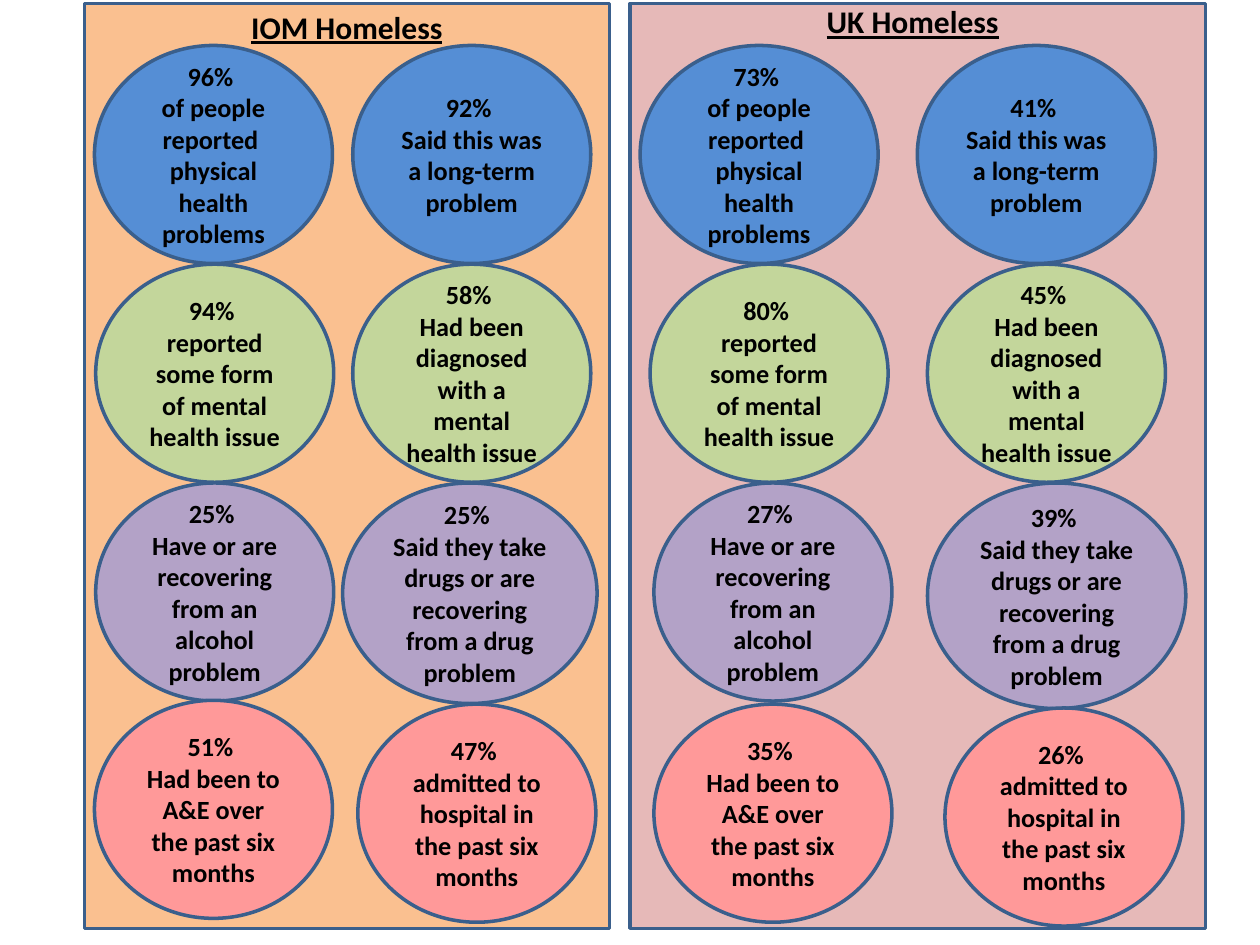
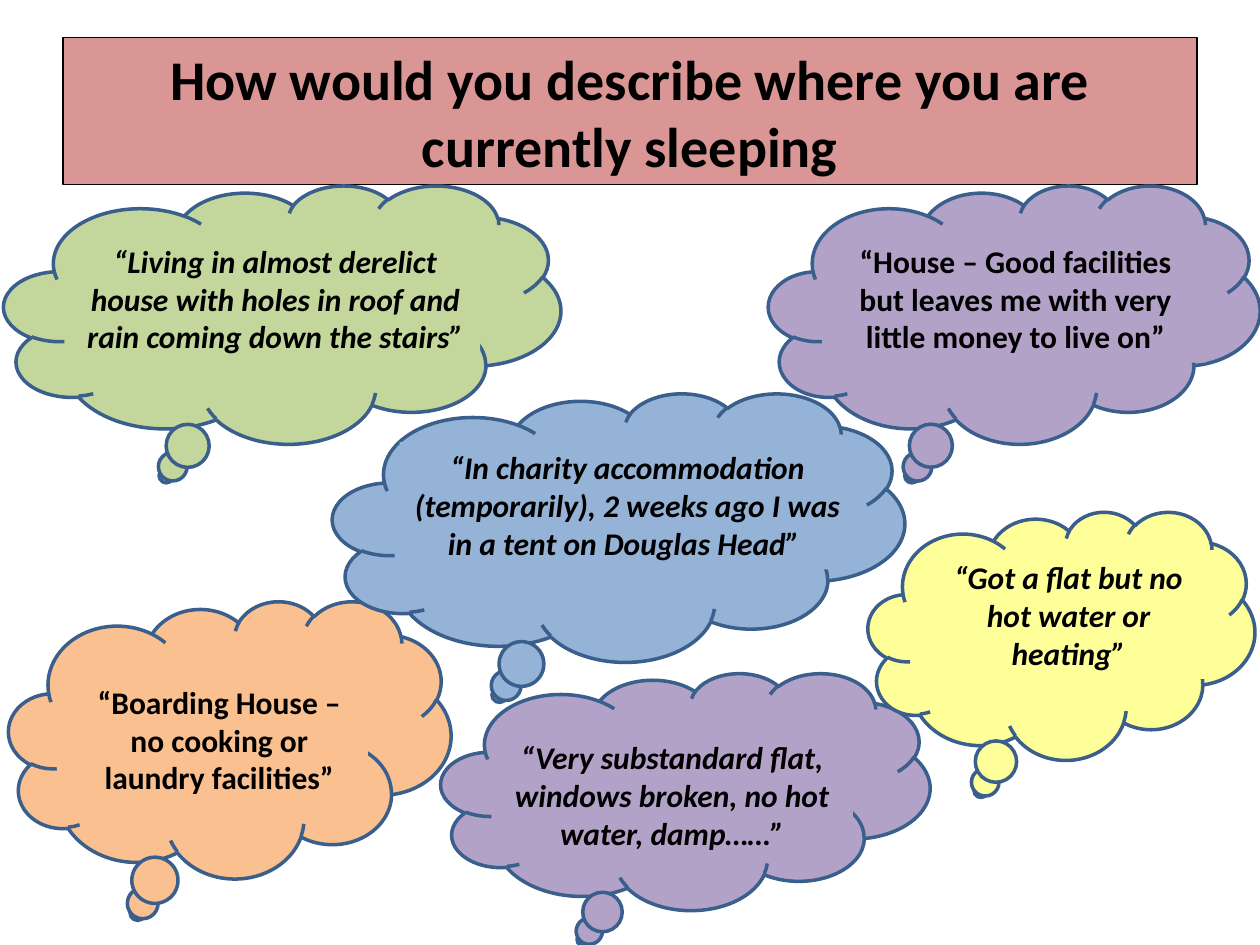
from dataclasses import dataclass

from pptx import Presentation
from pptx.dml.color import RGBColor
from pptx.enum.shapes import MSO_SHAPE as Preset
from pptx.enum.text import MSO_ANCHOR as Anchor, MSO_AUTO_SIZE as AutoSize, PP_ALIGN as Align
from pptx.util import Pt


@dataclass(frozen=True)
class Theme:
    font: str = "Calibri"
    ink: str = "000000"
    outline: str = "3A5F8C"
    orange: str = "FAC090"
    pink: str = "E6B9B8"
    rose: str = "D99694"
    blue: str = "558ED5"
    pale_blue: str = "95B3D7"
    green: str = "C3D69B"
    purple: str = "B3A2C7"
    red: str = "FF9999"
    yellow: str = "FFFF99"
    title_size: float = 32
    body_size: float = 18
    circle_size: float = 15
    outline_width: float = 2
    hairline: float = 0.75


THEME = Theme()


@dataclass(frozen=True)
class Box:
    left: float
    top: float
    width: float
    height: float

    def inside(self, left, top, width, height):
        """Return a box whose offsets are measured from this one."""
        return Box(self.left + left, self.top + top, width, height)

    def lengths(self):
        return [Pt(value) for value in (self.left, self.top, self.width, self.height)]


@dataclass(frozen=True)
class Circle:
    percent: int
    left: float
    drop: float = 0
    width: float = 136
    height: float = 124.6


ROW_PITCH = 125
FIRST_ROW_TOP = 24

# Fill, then the statement of the left and of the right circle
TOPICS = [
    (THEME.blue, ["of people reported ", "physical health problems"],
     ["Said this was a long-term problem"]),
    (THEME.green, ["reported some form of mental health issue"],
     ["Had been diagnosed with a mental health issue"]),
    (THEME.purple, ["Have or are recovering from an alcohol problem"],
     ["Said they take drugs or are recovering from a drug problem"]),
    (THEME.red, ["Had been to A&E over the past six months"],
     ["admitted to hospital in the past six months"]),
]

IOM_CIRCLES = [
    (Circle(96, 5.8), Circle(92, 153.4)),
    (Circle(94, 6.5), Circle(58, 153.4)),
    (Circle(25, 6.5), Circle(25, 147.6, width=145.4, height=126)),
    (Circle(51, 5.8, drop=-0.8), Circle(47, 156.3, drop=1.4)),
]
UK_CIRCLES = [
    (Circle(73, 5.8), Circle(41, 164.2)),
    (Circle(80, 11.5), Circle(45, 170)),
    (Circle(27, 13.7), Circle(39, 170, width=147.6, height=128.9)),
    (Circle(35, 13.7, drop=1.4), Circle(26, 180, drop=3.6)),
]

# Cloud box, caption offset and width, fill, italic, words
QUOTES = [
    (Box(439.2, 105.8, 280.8, 147.6), (32.4, 28.8, 217.4), THEME.purple, False,
     "“House – Good facilities but leaves me with very little money to live on”"),
    (Box(5, 343.4, 252.7, 158.4), (35.3, 43.2, 170), THEME.orange, False,
     "“Boarding House – no cooking or laundry facilities”"),
    (Box(2.2, 105.8, 318.2, 147.6), (38.2, 28.8, 234), THEME.green, True,
     "“Living in almost derelict house with holes in roof and rain coming down the stairs”"),
    (Box(252, 384.5, 279.4, 135.4), (28.8, 33.8, 206.6), THEME.purple, True,
     "“Very substandard flat, windows broken, no hot water, damp……”"),
    (Box(496.1, 292.3, 221, 141.8), (29.5, 23, 170), THEME.yellow, True,
     "“Got a flat but no hot water or heating”"),
    (Box(190.1, 224.6, 326.9, 153.4), (38.2, 28.1, 260.6), THEME.pale_blue, True,
     "“In charity accommodation (temporarily), 2 weeks ago I was in a tent on Douglas Head” "),
]
CAPTION_HEIGHT = 72.7


def color(code):
    return RGBColor.from_string(code)


def write_text(shape, *lines, size=THEME.body_size, italic=False, underline=False,
               anchor=Anchor.TOP):
    """Fill the shape with one centred bold paragraph per line."""
    frame = shape.text_frame
    frame.word_wrap = True
    frame.auto_size = AutoSize.NONE
    frame.vertical_anchor = anchor
    for index, line in enumerate(lines):
        paragraph = frame.add_paragraph() if index else frame.paragraphs[0]
        paragraph.alignment = Align.CENTER
        run = paragraph.add_run()
        run.text = line
        font = run.font
        font.name = THEME.font
        font.size = Pt(size)
        font.bold = True
        font.italic = italic
        font.underline = underline
        font.color.rgb = color(THEME.ink)


def paint(shape, fill, outline=THEME.outline, width=THEME.outline_width):
    shape.fill.solid()
    shape.fill.fore_color.rgb = color(fill)
    if outline:
        shape.line.color.rgb = color(outline)
        shape.line.width = Pt(width)
    else:
        shape.line.fill.background()


def add_preset(shapes, preset, box, fill, **line_format):
    shape = shapes.add_shape(preset, *box.lengths())
    shape.shadow.inherit = False
    paint(shape, fill, **line_format)
    return shape


def add_panel(slide, box, fill, heading, heading_box, circle_rows):
    """Draw a coloured panel with a heading and two columns of circles."""
    add_preset(slide.shapes, Preset.RECTANGLE, box, fill)
    heading_shape = slide.shapes.add_textbox(*box.inside(*heading_box).lengths())
    write_text(heading_shape, heading, underline=True)
    for row, (circles, (circle_fill, *statements)) in enumerate(zip(circle_rows, TOPICS)):
        for circle, statement in zip(circles, statements):
            top = FIRST_ROW_TOP + row * ROW_PITCH + circle.drop
            circle_box = box.inside(circle.left, top, circle.width, circle.height)
            shape = add_preset(slide.shapes, Preset.OVAL, circle_box, circle_fill)
            write_text(shape, f"{circle.percent}% ", *statement,
                       size=THEME.circle_size, anchor=Anchor.MIDDLE)


def add_title(slide, box, text):
    title = slide.shapes.title
    title.left, title.top, title.width, title.height = box.lengths()
    paint(title, THEME.rose, outline=THEME.ink, width=THEME.hairline)
    write_text(title, text, size=THEME.title_size, anchor=Anchor.MIDDLE)


def add_quote(slide, box, caption, fill, italic, words):
    """Group a thought cloud with the caption laid over it."""
    shapes = slide.shapes.add_group_shape().shapes
    add_preset(shapes, Preset.CLOUD_CALLOUT, box, fill)
    caption_box = box.inside(*caption, CAPTION_HEIGHT)
    caption_shape = add_preset(shapes, Preset.RECTANGLE, caption_box, fill, outline=None)
    write_text(caption_shape, words, italic=italic)


def build_comparison_slide(presentation):
    slide = presentation.slides.add_slide(presentation.slide_layouts[6])
    add_panel(slide, Box(360, 2, 329, 528.5), THEME.pink, "UK Homeless",
              (11.5, -4.2, 300, 72.7), UK_CIRCLES)
    add_panel(slide, Box(48.2, 2, 300.2, 528.5), THEME.orange, "IOM Homeless",
              (0, -1, 300, 72.7), IOM_CIRCLES)


def build_quotes_slide(presentation):
    slide = presentation.slides.add_slide(presentation.slide_layouts[5])
    add_title(slide, Box(36, 21.6, 648, 84),
              "How would you describe where you are currently sleeping")
    for quote in QUOTES:
        add_quote(slide, *quote)


def main():
    presentation = Presentation()
    presentation.slide_width, presentation.slide_height = Pt(720), Pt(540)
    build_comparison_slide(presentation)
    build_quotes_slide(presentation)
    presentation.save("out.pptx")


if __name__ == "__main__":
    main()
